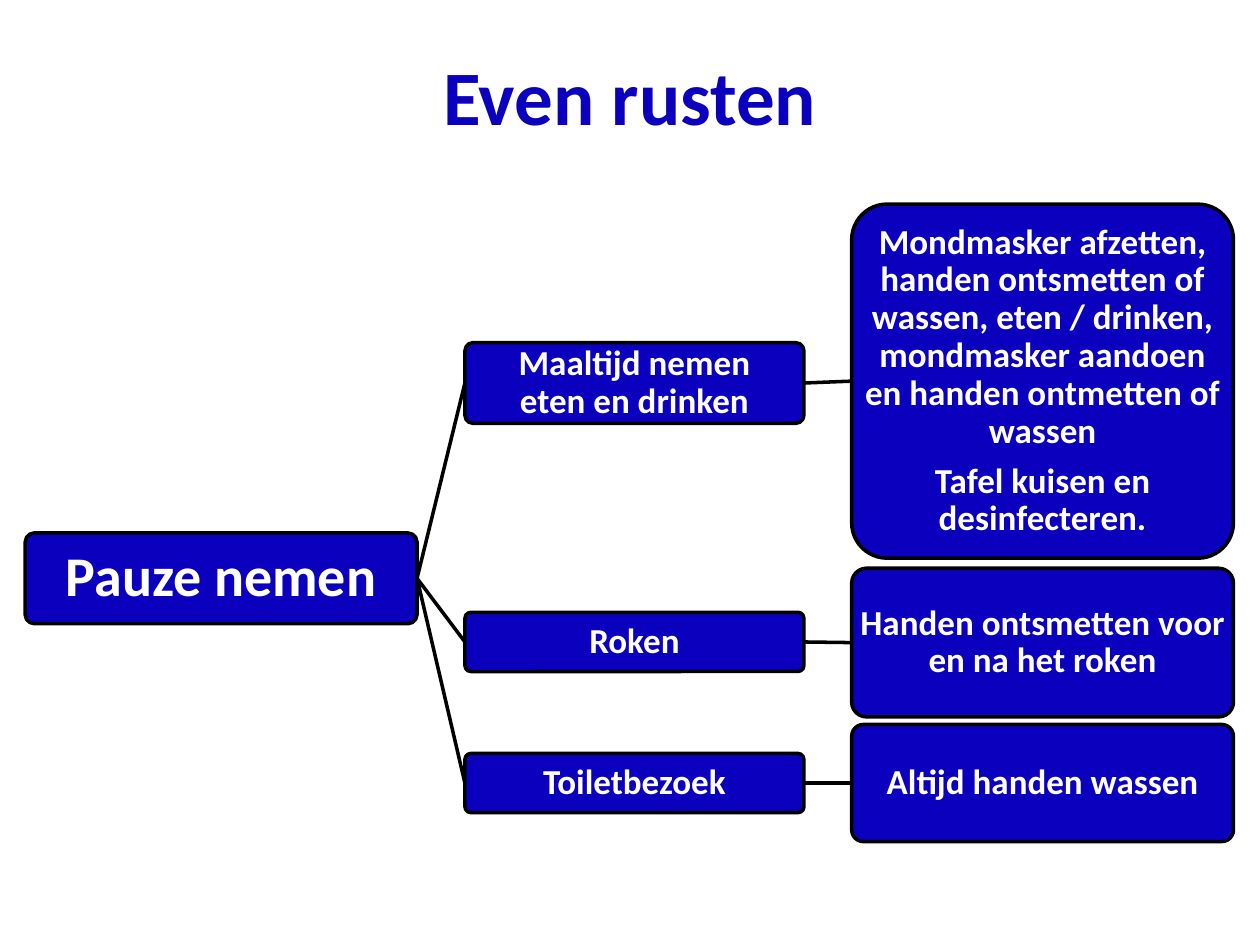
from lxml import etree
from pptx import Presentation
from pptx import util as u
from pptx.dml.color import RGBColor
from pptx.enum import shapes, text
from pptx.oxml import ns

BLUE = RGBColor(0x0A, 0x00, 0xBE)
BLACK = RGBColor(0, 0, 0)
WHITE = RGBColor(0xFF, 0xFF, 0xFF)

# Tree columns: left edge and width in inches
ROOT_COLUMN = (0.2, 3.11)
BRANCH_COLUMN = (3.69, 2.69)
LEAF_COLUMN = (6.76, 3.03)
RIGHT_SIDE, LEFT_SIDE = 3, 1

# Each row: (branch text, top, height), (leaf paragraphs, top, height)
ROWS = [
    (("Maaltijd nemen\veten en drinken", 2.72, 0.64),
     (["Mondmasker afzetten, handen ontsmetten of wassen, eten / drinken, "
       "mondmasker aandoen en handen ontmetten of wassen",
       "Tafel kuisen en desinfecteren."], 1.62, 2.81)),
    (("Roken", 4.86, 0.47),
     (["Handen ontsmetten voor en na het roken"], 4.51, 1.18)),
    (("Toiletbezoek", 5.98, 0.47),
     (["Altijd handen wassen"], 5.75, 0.93)),
]


def style_runs(paragraph, size, color):
    font_format = {"name": "Calibri", "size": u.Pt(size), "bold": True}
    for run in paragraph.runs:
        for attribute, value in font_format.items():
            setattr(run.font, attribute, value)
        run.font.color.rgb = color


def set_title(slide, wording):
    title = slide.shapes.title
    place = {"left": 0.5, "top": 0.13, "width": 9, "height": 1.25}
    for attribute, value in place.items():
        setattr(title, attribute, u.Inches(value))
    title.text_frame.text = wording
    title.text_frame.vertical_anchor = text.MSO_ANCHOR.MIDDLE
    heading = title.text_frame.paragraphs[0]
    heading.alignment = text.PP_ALIGN.CENTER
    style_runs(heading, 44, BLUE)


def add_node(slide, column, top, height, paragraphs, size=20):
    left, width = column
    node = slide.shapes.add_shape(
        shapes.MSO_SHAPE.ROUNDED_RECTANGLE,
        *(u.Inches(length) for length in (left, top, width, height)))
    node.adjustments[0] = 0.1
    node.shadow.inherit = False
    node.fill.solid()
    node.fill.fore_color.rgb = BLUE
    node.line.color.rgb = BLACK
    node.line.width = u.Pt(2)

    frame = node.text_frame
    frame_format = {"word_wrap": True,
                    "vertical_anchor": text.MSO_ANCHOR.MIDDLE}
    for side in ("left", "top", "right", "bottom"):
        frame_format[f"margin_{side}"] = u.Inches(0.01)
    for attribute, value in frame_format.items():
        setattr(frame, attribute, value)

    for index, wording in enumerate(paragraphs):
        paragraph = frame.add_paragraph() if index else frame.paragraphs[0]
        paragraph.text = wording
        paragraph.alignment = text.PP_ALIGN.CENTER
        paragraph.line_spacing = 0.9
        if index:
            paragraph.space_before = u.Pt(0.35 * size)
        style_runs(paragraph, size, WHITE)
    return node


def link(slide, parent, child):
    """Join the parent's right side to the child's left side."""
    branch_line = slide.shapes.add_connector(
        shapes.MSO_CONNECTOR.STRAIGHT, 0, 0, 0, 0)
    branch_line.begin_connect(parent, RIGHT_SIDE)
    branch_line.end_connect(child, LEFT_SIDE)
    branch_line.line.color.rgb = BLACK
    branch_line.line.width = u.Pt(2)
    etree.SubElement(branch_line._element.spPr, ns.qn("a:effectLst"))


def main():
    presentation = Presentation()
    presentation.slide_width = u.Inches(10)
    presentation.slide_height = u.Inches(7.5)
    slide = presentation.slides.add_slide(presentation.slide_layouts[5])

    set_title(slide, "Even rusten")
    root = add_node(slide, ROOT_COLUMN, 4.23, 0.72, ["Pauze nemen"], 32)
    for (activity, branch_top, branch_height), (rules, leaf_top, leaf_height) in ROWS:
        branch = add_node(slide, BRANCH_COLUMN, branch_top, branch_height, [activity])
        leaf = add_node(slide, LEAF_COLUMN, leaf_top, leaf_height, rules)
        link(slide, root, branch)
        link(slide, branch, leaf)

    presentation.save("out.pptx")


if __name__ == "__main__":
    main()
